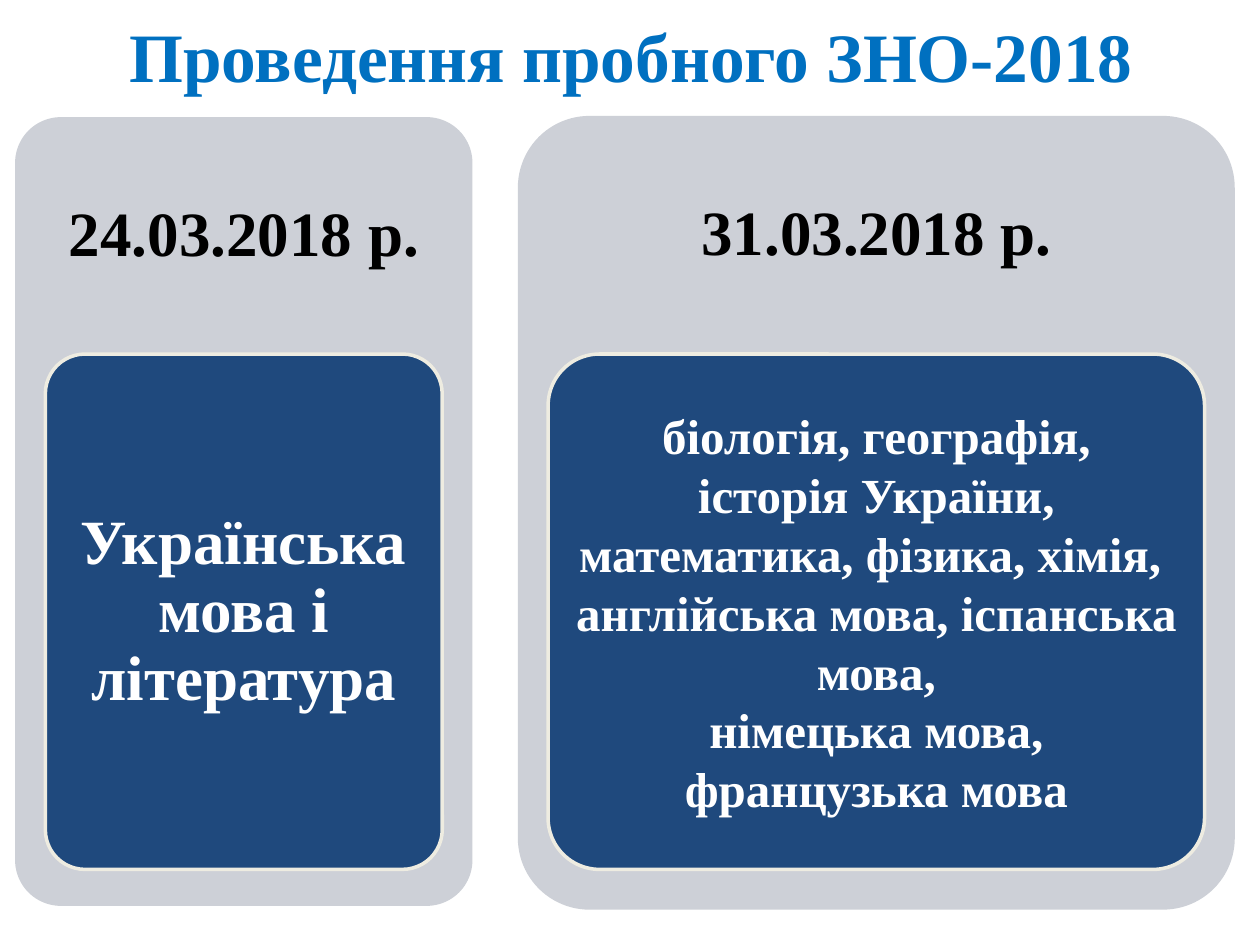
from pptx import Presentation
from pptx import util as u
from pptx.dml.color import RGBColor
from pptx.enum import shapes, text

BLUE = RGBColor(0x00, 0x70, 0xC0)
NAVY = RGBColor(0x1F, 0x49, 0x7D)
GREY = RGBColor(0xCD, 0xD0, 0xD7)
CREAM = RGBColor(0xEE, 0xEC, 0xE1)
BLACK = RGBColor(0, 0, 0)
WHITE = RGBColor(0xFF, 0xFF, 0xFF)

PANEL_TOP, PANEL_HIGH, MARGIN = 2.81, 4.09, 0.24


class Deck:
    """Holds the text style and the current slide."""
    font = {"name": "Times New Roman", "bold": True}

    def __init__(self, slide):
        self.slide = slide

    def fill_text(self, frame, lines, size, color, pad=(0.1, 0.05), **para):
        frame.word_wrap = True
        frame.auto_size = text.MSO_AUTO_SIZE.NONE
        frame.vertical_anchor = text.MSO_ANCHOR.MIDDLE
        for side, gap in zip(("left", "top", "right", "bottom"), pad * 2):
            setattr(frame, "margin_" + side, u.Inches(gap))
        frame.text = "\n".join(lines)
        look = {**self.font, "size": u.Pt(size)}
        for par in frame.paragraphs:
            for key, val in {"alignment": text.PP_ALIGN.CENTER, **para}.items():
                setattr(par, key, val)
            for run in par.runs:
                for key, val in look.items():
                    setattr(run.font, key, val)
                run.font.color.rgb = color

    def title(self, line, box):
        item = self.slide.shapes.title
        for key, val in zip(("left", "top", "width", "height"), box):
            setattr(item, key, u.Inches(val))
        self.fill_text(item.text_frame, [line], 39.6, BLUE)

    def block(self, box, fill, edge=None):
        item = self.slide.shapes.add_shape(
            shapes.MSO_SHAPE.ROUNDED_RECTANGLE, *map(u.Inches, box))
        item.adjustments[0] = 0.1
        item.shadow.inherit = False
        item.fill.solid()
        item.fill.fore_color.rgb = fill
        if edge is None:
            item.line.fill.background()
        else:
            item.line.color.rgb = edge
            item.line.width = u.Pt(2)
        return item

    def label(self, box, line, **style):
        item = self.slide.shapes.add_textbox(*map(u.Inches, box))
        self.fill_text(item.text_frame, [line], 36, BLACK, **style)

    def card(self, box, date, lines, **style):
        left, top, wide, _ = box
        self.block(box, GREY)
        self.label((left, top, wide, PANEL_TOP - top), date,
                   pad=(0.15, 0.15), line_spacing=0.9)
        panel = self.block((left + MARGIN, PANEL_TOP, wide - 2 * MARGIN, PANEL_HIGH),
                           NAVY, CREAM)
        self.fill_text(panel.text_frame, lines, color=WHITE, **style)


def main():
    prs = Presentation()
    prs.slide_width, prs.slide_height = u.Inches(10), u.Inches(7.5)
    deck = Deck(prs.slides.add_slide(prs.slide_layouts[5]))

    # Title
    deck.title("Проведення пробного ЗНО-2018", (0.51, 0.13, 9, 0.61))

    # First test day
    deck.card((0.12, 0.93, 3.63, 6.26), "24.03.2018 р.",
              ["Українська мова і література"],
              size=36, pad=(0.1, 0.07), line_spacing=0.9)

    # Second test day
    deck.card((4.11, 0.92, 5.69, 6.3), "31.03.2018 р.",
              ["біологія, географія,",
               "історія України,",
               "математика, фізика, хімія, ",
               "англійська мова, іспанська мова,",
               "німецька мова, французька мова"],
              size=28, pad=(0.08, 0.06))

    prs.save("out.pptx")


if __name__ == "__main__":
    main()
